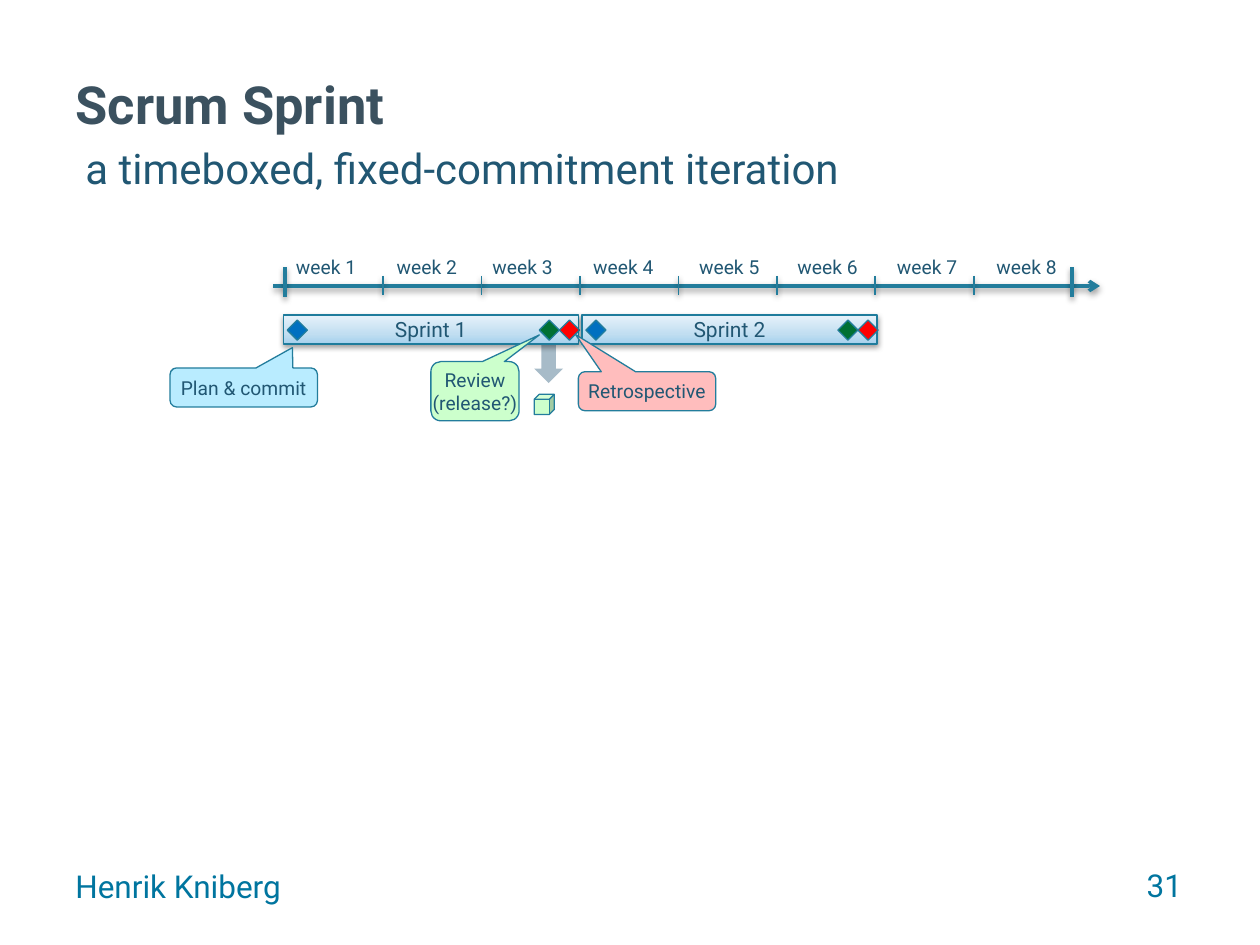
from lxml.etree import SubElement
from pptx import Presentation
from pptx.dml.color import RGBColor
from pptx.enum.shapes import MSO_CONNECTOR, MSO_SHAPE
from pptx.enum.text import MSO_ANCHOR, PP_ALIGN
from pptx.oxml import parse_xml
from pptx.oxml.ns import nsdecls, qn
from pptx.util import Inches, Pt

FONT = "Roboto"
INK = "215773"
EDGE = "237D9C"
FOOT = "00759F"


def color(target, value):
    target.rgb = RGBColor.from_string(value)


def box(*sizes):
    return [Inches(size) for size in sizes]


def write(frame, lines, size, ink=INK, bold=False, align=PP_ALIGN.LEFT):
    for i, line in enumerate(lines):
        para = frame.paragraphs[0] if i == 0 else frame.add_paragraph()
        para.alignment = align
        run = para.add_run()
        run.text = line
        run.font.name = FONT
        run.font.size = Pt(size)
        run.font.bold = bold
        color(run.font.color, ink)


def label(slide, place, text, size, ink=INK, align=PP_ALIGN.LEFT, wrap=False):
    frame = slide.shapes.add_textbox(*box(*place)).text_frame
    frame.word_wrap = wrap
    write(frame, [text], size, ink, align=align)


def shade(item):
    """Give a shape or connector a soft shadow straight below it."""
    props = item._element.spPr
    for old in props.findall(qn("a:effectLst")):
        props.remove(old)
    props.append(parse_xml(
        f'<a:effectLst {nsdecls("a")}>'
        '<a:outerShdw blurRad="40000" dist="20000" dir="5400000" rotWithShape="0">'
        '<a:srgbClr val="000000"><a:alpha val="38000"/></a:srgbClr>'
        '</a:outerShdw></a:effectLst>'))


def blend(shape):
    """Fill a shape with a blue gradient that lightens upwards."""
    stops = "".join(
        f'<a:gs pos="{pos}"><a:srgbClr val="{tone}"/></a:gs>'
        for pos, tone in ((0, "A6D1ED"), (35000, "C1DEF1"), (100000, "E7F2FA")))
    props = shape._element.spPr
    props.replace(props.find(qn("a:solidFill")), parse_xml(
        f'<a:gradFill {nsdecls("a")} rotWithShape="1"><a:gsLst>{stops}</a:gsLst>'
        '<a:lin ang="16200000" scaled="0"/></a:gradFill>'))


def draw(slide, kind, place, fill, edge=EDGE):
    shape = slide.shapes.add_shape(kind, *box(*place))
    shape.shadow.inherit = False
    shape.fill.solid()
    color(shape.fill.fore_color, fill)
    if edge:
        shape.line.width = Pt(0.75)
        color(shape.line.color, edge)
    else:
        shape.line.fill.background()
    return shape


def center(shape, lines, size):
    frame = shape.text_frame
    frame.word_wrap = False
    frame.vertical_anchor = MSO_ANCHOR.MIDDLE
    write(frame, lines, size, align=PP_ALIGN.CENTER)


def rule(slide, ends, width, arrow=False):
    line = slide.shapes.add_connector(MSO_CONNECTOR.STRAIGHT, *box(*ends))
    line.line.width = Pt(width)
    color(line.line.color, EDGE)
    if arrow:
        SubElement(line.line._get_or_add_ln(), qn("a:tailEnd"), type="arrow")
    shade(line)


def axis(slide):
    start, span, weeks = 2.26, 6.25, 8
    rule(slide, (2.17, 2.27, 8.73, 2.27), 2, arrow=True)
    for i in range(weeks + 1):
        x = start + span * i / weeks
        if i in (0, weeks):
            rule(slide, (x, 2.12, x, 2.36), 2)
        else:
            rule(slide, (x, 2.19, x, 2.34), 1)
    lefts = (2.25, 3.05, 3.81, 4.61, 5.45, 6.23, 7.02, 7.81)
    for week, left in enumerate(lefts, 1):
        label(slide, (left, 1.98, 0.69, 0.29), f"week {week}", 11)


def sprint(slide, left, name):
    bar = draw(slide, MSO_SHAPE.RECTANGLE, (left, 2.5, 2.34, 0.23), "C1DEF1", "1F7C9C")
    blend(bar)
    shade(bar)
    center(bar, [name], 12)
    # Planning, retrospective and review milestones
    for shift, fill in ((0.03, "0070C0"), (2.19, "FF0000"), (2.03, "007033")):
        draw(slide, MSO_SHAPE.DIAMOND, (left + shift, 2.54, 0.16, 0.16), fill)


def callout(slide, place, tip, fill, lines):
    shape = draw(slide, MSO_SHAPE.ROUNDED_RECTANGULAR_CALLOUT, place, fill)
    for i, value in enumerate((*tip, 0.167)):
        shape.adjustments[i] = value
    center(shape, lines, 11)


def main():
    deck = Presentation()
    deck.slide_width, deck.slide_height = box(10, 7.5)
    slide = deck.slides.add_slide(deck.slide_layouts[5])

    # Heading
    title = slide.shapes.title
    title.left, title.top, title.width, title.height = box(0.5, 0.52, 9, 1.4)
    title.text_frame.vertical_anchor = MSO_ANCHOR.TOP
    write(title.text_frame, ["Scrum Sprint"], 30, "3B515F", bold=True)
    label(slide, (0.58, 1.08, 6.25, 0.5), "a timeboxed, fixed-commitment iteration", 24)

    # Footer
    label(slide, (0.5, 6.83, 3.17, 0.52), "Henrik Kniberg", 18, FOOT, wrap=True)
    label(slide, (7.15, 6.82, 2.33, 0.52), "31", 18, FOOT, PP_ALIGN.RIGHT, wrap=True)

    # Released product
    draw(slide, MSO_SHAPE.CUBE, (4.24, 3.13, 0.16, 0.16), "CCFFCC")
    draw(slide, MSO_SHAPE.DOWN_ARROW, (4.24, 2.73, 0.23, 0.31), "A7BBC8", None)

    # Timeline and sprints
    axis(slide)
    for left, name in ((2.25, "Sprint 1"), (4.62, "Sprint 2")):
        sprint(slide, left, name)

    # Meetings
    callout(slide, (1.35, 2.92, 1.17, 0.31), (0.33, -1.02), "B9ECFF", ["Plan & commit"])
    callout(slide, (3.42, 2.87, 0.7, 0.47), (0.73, -0.95), "CCFFCC", ["Review", "(release?)"])
    callout(slide, (4.59, 2.95, 1.09, 0.31), (-0.52, -1.45), "FFBDBD", ["Retrospective"])

    deck.save("out.pptx")


if __name__ == "__main__":
    main()
